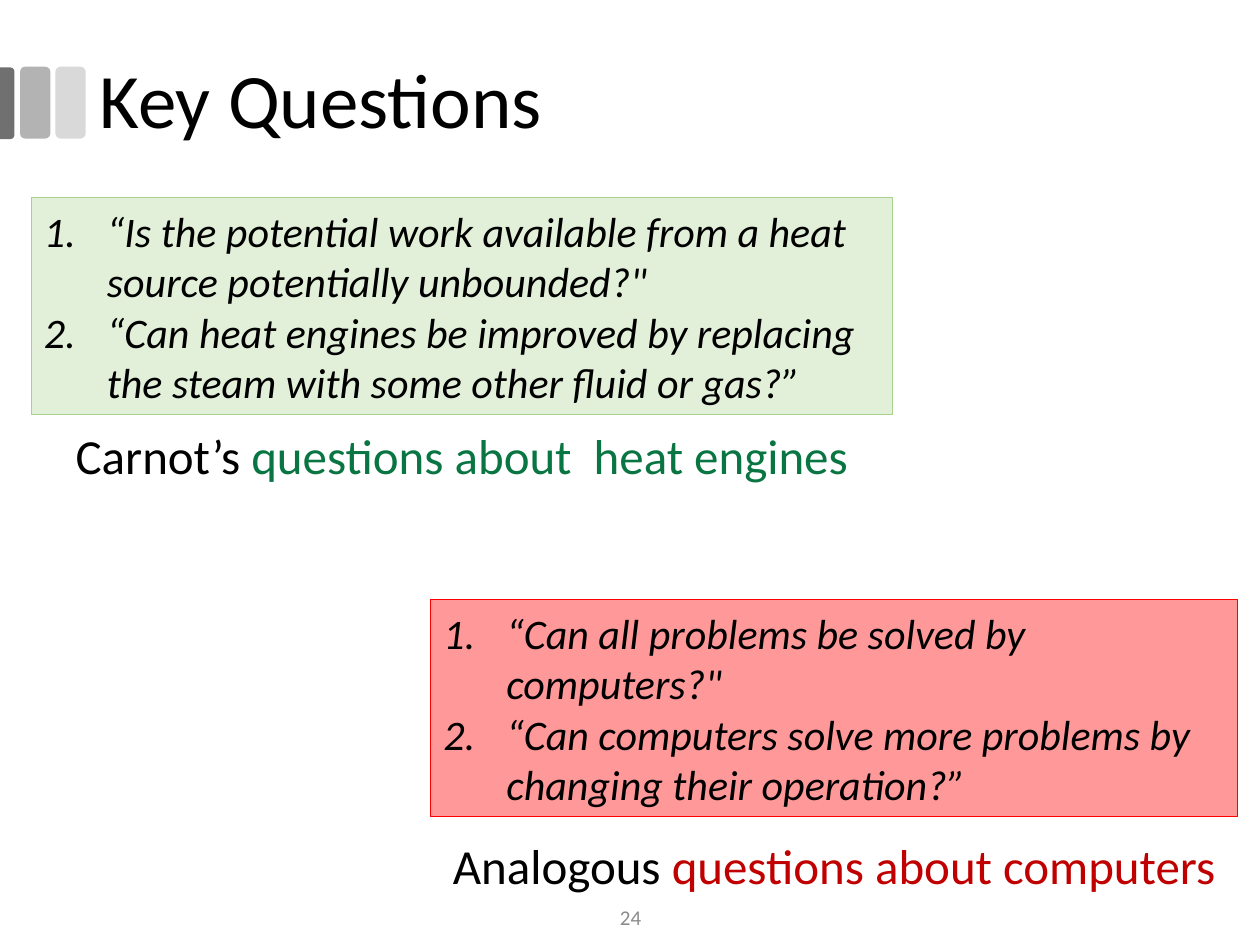
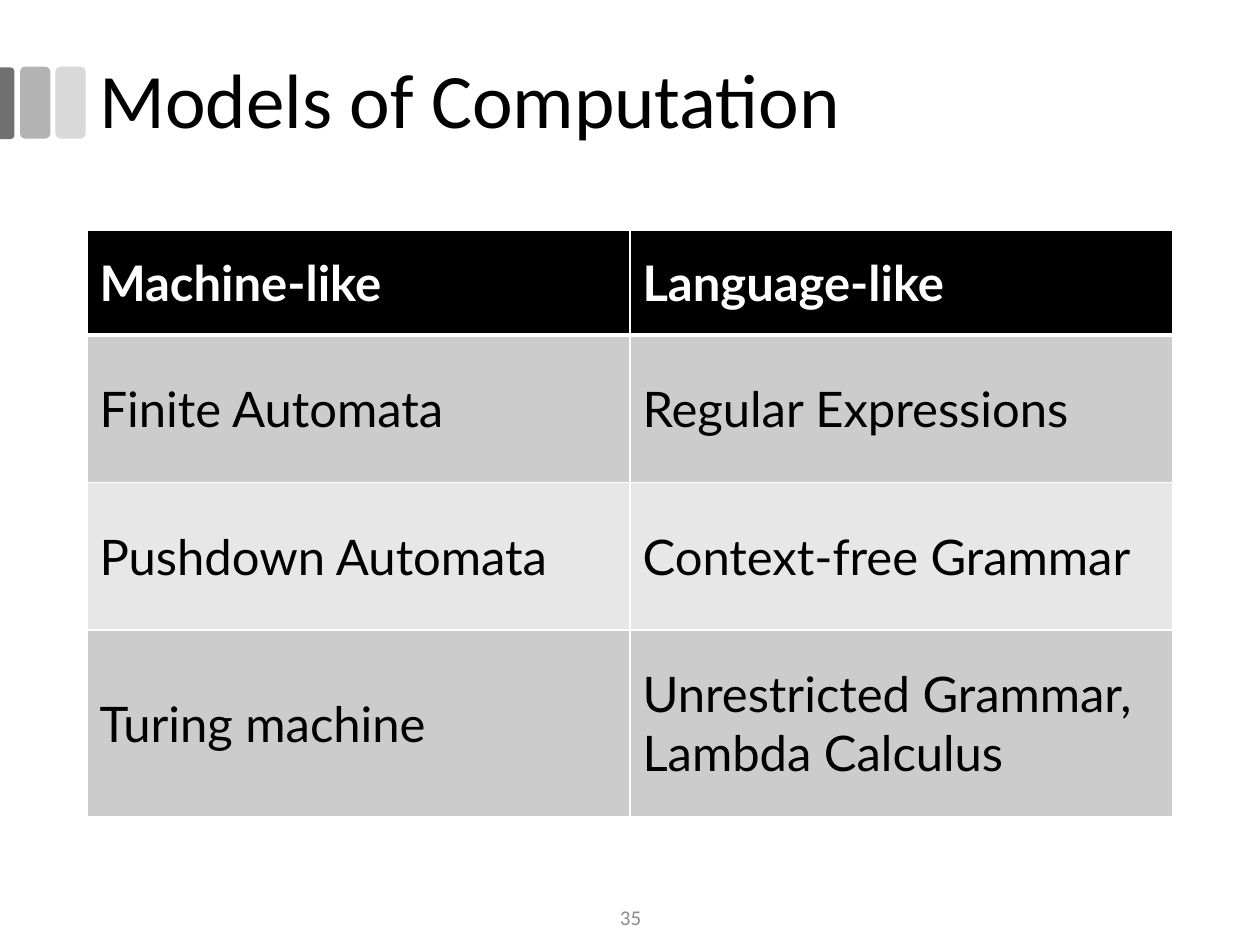
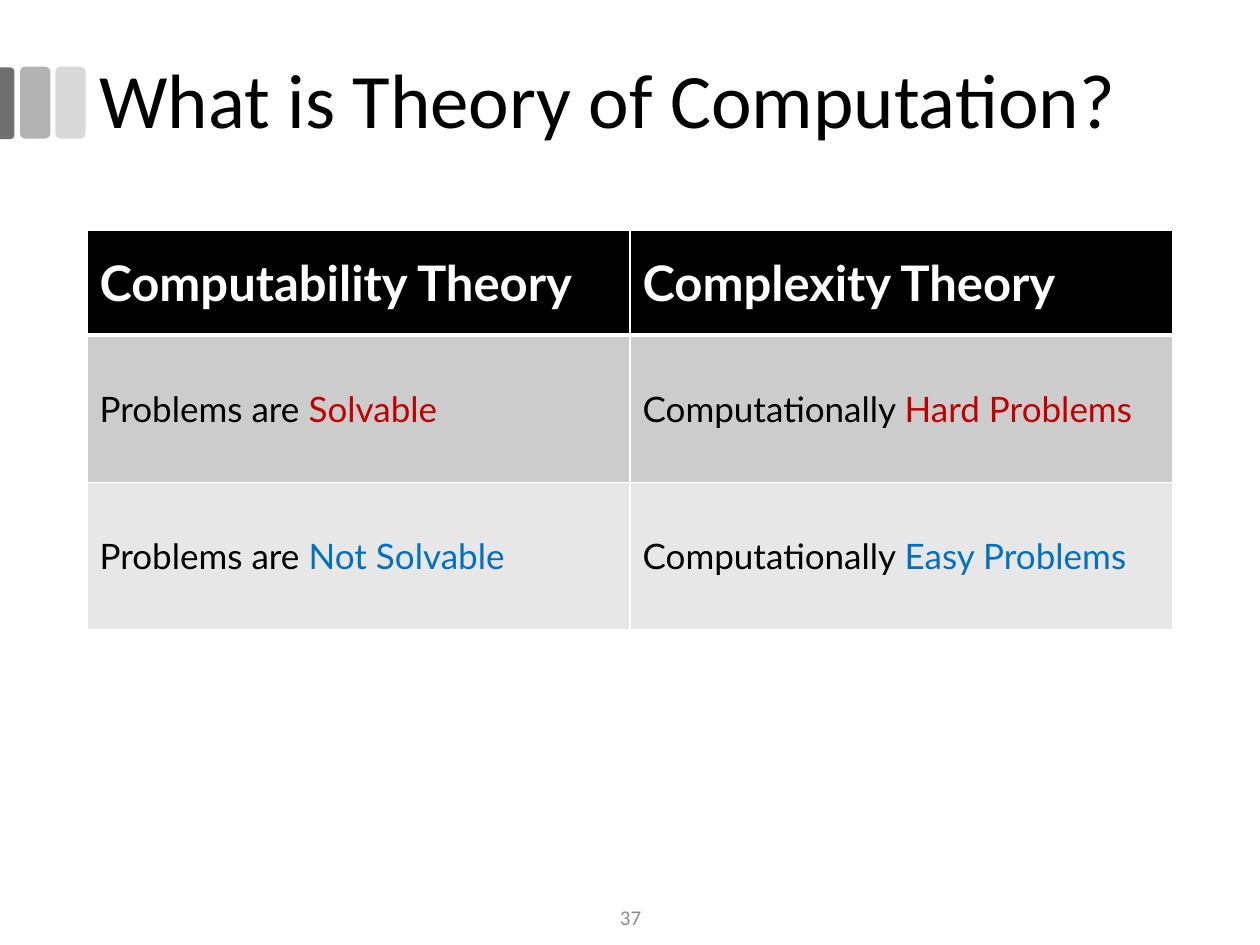
from lxml import etree
from pptx import Presentation
from pptx.dml.color import RGBColor
from pptx.enum.shapes import MSO_SHAPE as Shape
from pptx.enum.text import MSO_ANCHOR as Anchor, PP_ALIGN as Align
from pptx.oxml.ns import qn
from pptx.util import Inches, Pt

BLACK, WHITE, GRAY = "000000", "FFFFFF", "8C8C8C"
GREEN, RED, BLUE = "097542", "C00000", "0070C0"
ROW_FILLS = ["CCCCCC", "E7E7E7"]


def color(value):
    return RGBColor.from_string(value)


def add_runs(paragraph, runs, size, font="Calibri", bold=False, italic=False):
    for text, run_color in runs:
        run = paragraph.add_run()
        run.text = text
        run.font.name = font
        run.font.size = Pt(size)
        run.font.bold = bold
        run.font.italic = italic
        run.font.color.rgb = color(run_color)


presentation = Presentation()
presentation.slide_width = Inches(10)
presentation.slide_height = Inches(7.5)

tabs = [
    (Shape.ROUNDED_RECTANGLE, 0.44, 0.53, 0.24, 0.57, 0, "D9D9D9"),
    (Shape.ROUNDED_RECTANGLE, 0.16, 0.53, 0.24, 0.57, 0, "B3B3B3"),
    (Shape.ROUND_2_SAME_RECTANGLE, -0.23, 0.76, 0.57, 0.12, 90, "707070"),
]
headings = [
    ("Key Questions", "24"),
    ("Models of Computation", "35"),
    ("What is Theory of Computation?", "37"),
]
slides = []
for title, number in headings:
    slide = presentation.slides.add_slide(presentation.slide_layouts[6])
    slides.append(slide)
    for preset, left, top, width, height, rotation, fill in tabs:
        tab = slide.shapes.add_shape(
            preset, Inches(left), Inches(top), Inches(width), Inches(height))
        tab.shadow.inherit = False
        tab.rotation = rotation
        tab.fill.solid()
        tab.fill.fore_color.rgb = color(fill)
        tab.line.fill.background()
        if rotation:
            tab.adjustments[0] = 0.29

    title_box = slide.shapes.add_textbox(
        Inches(0.69), Inches(0.17), Inches(8.62), Inches(1.31))
    title_box.text_frame.word_wrap = True
    title_box.text_frame.vertical_anchor = Anchor.MIDDLE
    paragraph = title_box.text_frame.paragraphs[0]
    paragraph.line_spacing = 0.9
    add_runs(paragraph, [(title, BLACK)], 44)

    number_box = slide.shapes.add_textbox(
        Inches(3.88), Inches(7.08), Inches(2.25), Inches(0.4))
    number_box.text_frame.word_wrap = True
    number_box.text_frame.vertical_anchor = Anchor.MIDDLE
    paragraph = number_box.text_frame.paragraphs[0]
    paragraph.alignment = Align.CENTER
    add_runs(paragraph, [(number, GRAY)], 12)

question_groups = [
    (0.25, 1.57, 6.83, "E2F0D9", "A9D18E",
     ["“Is the potential work available from a heat source potentially unbounded?\"",
      "“Can heat engines be improved by replacing the steam with some other fluid or gas?”"],
     3.33, [("Carnot’s ", BLACK), ("questions about  heat engines", GREEN)]),
    (3.42, 4.76, 6.4, "FF9999", "FF0000",
     ["“Can all problems be solved by computers?\"",
      "“Can computers solve more problems by changing their operation?”"],
     6.58, [("Analogous ", BLACK), ("questions about computers", RED)]),
]
for left, top, width, fill, line, questions, caption_top, caption in question_groups:
    panel = slides[0].shapes.add_shape(
        Shape.RECTANGLE, Inches(left), Inches(top), Inches(width), Inches(1.72))
    panel.shadow.inherit = False
    panel.fill.solid()
    panel.fill.fore_color.rgb = color(fill)
    panel.line.color.rgb = color(line)
    panel.line.width = Pt(0.5)
    frame = panel.text_frame
    frame.word_wrap = True
    for index, question in enumerate(questions):
        paragraph = frame.add_paragraph() if index else frame.paragraphs[0]
        paragraph.alignment = Align.LEFT
        properties = paragraph._p.get_or_add_pPr()
        properties.set("marL", str(Inches(0.5)))
        properties.set("indent", str(Inches(-0.5)))
        bullet_font = etree.SubElement(properties, qn("a:buFont"))
        bullet_font.set("typeface", "+mj-lt")
        bullet = etree.SubElement(properties, qn("a:buAutoNum"))
        bullet.set("type", "arabicPeriod")
        add_runs(paragraph, [(question, BLACK)], 24, italic=True)

    caption_box = slides[0].shapes.add_textbox(
        Inches(left), Inches(caption_top), Inches(width), Inches(0.57))
    caption_box.text_frame.word_wrap = True
    paragraph = caption_box.text_frame.paragraphs[0]
    paragraph.alignment = Align.CENTER
    add_runs(paragraph, caption, 28)

tables = [
    (slides[1], 28, [0.83, 1.17, 1.17, 1.48], [
        [[("Machine-like", WHITE)], [("Language-like", WHITE)]],
        [[("Finite Automata", BLACK)], [("Regular Expressions", BLACK)]],
        [[("Pushdown Automata", BLACK)], [("Context-free Grammar", BLACK)]],
        [[("Turing machine", BLACK)], [("Unrestricted Grammar, Lambda Calculus", BLACK)]],
    ]),
    (slides[2], 20, [0.83, 1.17, 1.17], [
        [[("Computability Theory", WHITE)], [("Complexity Theory", WHITE)]],
        [[("Problems are ", BLACK), ("Solvable", RED)],
         [("Computationally ", BLACK), ("Hard Problems", RED)]],
        [[("Problems are ", BLACK), ("Not Solvable", BLUE)],
         [("Computationally ", BLACK), ("Easy Problems", BLUE)]],
    ]),
]
for slide, body_size, row_heights, rows in tables:
    table = slide.shapes.add_table(
        len(rows), 2, Inches(0.69), Inches(1.83),
        Inches(8.62), Inches(sum(row_heights))).table
    for column in table.columns:
        column.width = Inches(4.31)
    for row_index, row in enumerate(rows):
        table.rows[row_index].height = Inches(row_heights[row_index])
        is_header = row_index == 0
        border_widths = {
            "a:lnL": 1,
            "a:lnR": 1,
            "a:lnT": 3 if row_index == 1 else 1,
            "a:lnB": 3 if is_header else 1,
        }
        for column_index, runs in enumerate(row):
            cell = table.cell(row_index, column_index)
            cell.vertical_anchor = Anchor.MIDDLE
            properties = cell._tc.get_or_add_tcPr()
            for side, width in border_widths.items():
                border = etree.SubElement(properties, qn(side))
                border.set("w", str(Pt(width)))
                border_fill = etree.SubElement(border, qn("a:solidFill"))
                etree.SubElement(border_fill, qn("a:srgbClr")).set("val", WHITE)
            cell.fill.solid()
            cell.fill.fore_color.rgb = color(
                BLACK if is_header else ROW_FILLS[(row_index - 1) % 2])
            add_runs(cell.text_frame.paragraphs[0], runs,
                     28 if is_header else body_size, "Lato", bold=is_header)

presentation.save("out.pptx")
